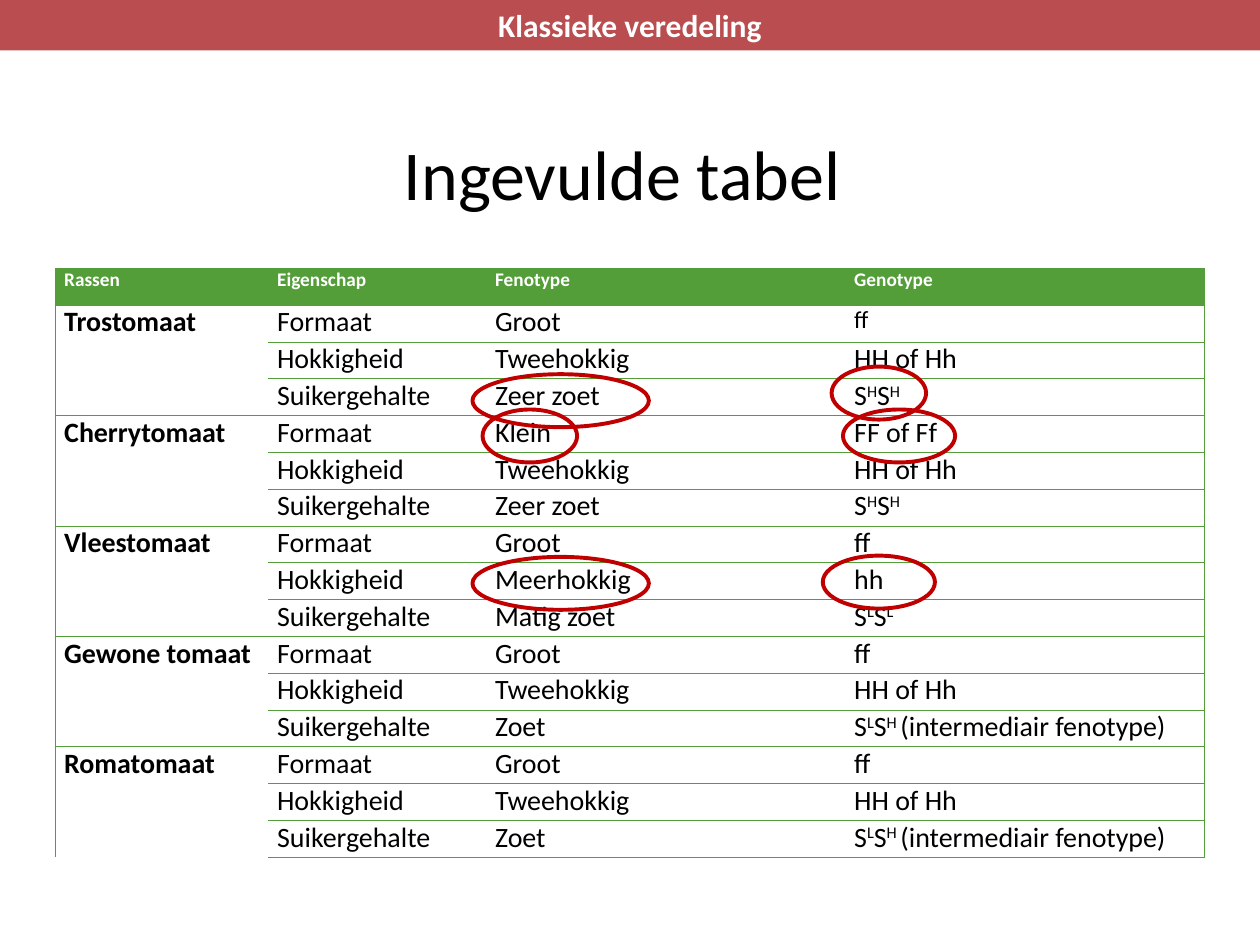
from lxml import etree
from pptx import Presentation
from pptx.dml.color import RGBColor
from pptx.enum import shapes, text
from pptx.oxml import ns
from pptx.util import Inches, Pt

GREEN = RGBColor(0x54, 0x9E, 0x39)
RED = RGBColor(0xC0, 0x00, 0x00)
BRICK = RGBColor(0xB9, 0x4D, 0x4F)
WHITE = RGBColor(0xFF, 0xFF, 0xFF)
BLACK = RGBColor(0x00, 0x00, 0x00)

CHAPTER = "Klassieke veredeling"
TITLE = "Ingevulde tabel "
HEADINGS = ["Rassen", "Eigenschap", "Fenotype", "Genotype"]
TRAITS = ["Formaat", "Hokkigheid", "Suikergehalte"]
INTERMEDIATE = "S|L|S|H |(intermediair fenotype)"
VARIETIES = [
    ("Trostomaat", [("Groot", "ff"), ("Tweehokkig", "HH of Hh"), ("Zeer zoet", "S|H|S|H")]),
    ("Cherrytomaat", [("Klein", "FF of Ff"), ("Tweehokkig", "HH of Hh"), ("Zeer zoet", "S|H|S|H")]),
    ("Vleestomaat", [("Groot", "ff"), ("Meerhokkig", "hh"), ("Matig zoet", "S|L|S|L")]),
    ("Gewone tomaat", [("Groot", "ff"), ("Tweehokkig", "HH of Hh"), ("Zoet", INTERMEDIATE)]),
    ("Romatomaat", [("Groot", "ff"), ("Tweehokkig", "HH of Hh"), ("Zoet", INTERMEDIATE)]),
]
COLUMN_WIDTHS = [1.69, 1.73, 2.85, 2.85]
TABLE_LEFT, TABLE_TOP, TABLE_HEIGHT = 0.44, 2.13, 4.68
HIGHLIGHT_HEIGHT = 0.42
HIGHLIGHTS = [
    (3.83, 3.25, 0.75), (3.75, 2.97, 1.4), (3.75, 4.42, 1.4),
    (6.6, 2.91, 0.75), (6.69, 3.25, 0.89), (6.53, 4.41, 0.89),
]


def write(frame, content, size=16, color=BLACK, bold=False, align=None, spacing=None):
    paragraph = frame.paragraphs[0]
    paragraph.alignment = align
    paragraph.line_spacing = spacing
    for index, part in enumerate(content.split("|")):
        run = paragraph.add_run()
        run.text = part
        run.font.name = "Calibri"
        run.font.size = Pt(size)
        run.font.bold = bold
        run.font.color.rgb = color
        if index % 2:
            run._r.get_or_add_rPr().set("baseline", "30000")


def set_borders(cell, visible):
    properties = cell._tc.get_or_add_tcPr()
    for side in "LRTB":
        line = etree.SubElement(properties, ns.qn(f"a:ln{side}"), w=str(Pt(0.5)))
        if side in visible:
            fill = etree.SubElement(line, ns.qn("a:solidFill"))
            etree.SubElement(fill, ns.qn("a:srgbClr"), val=str(GREEN))
        else:
            etree.SubElement(line, ns.qn("a:noFill"))


def add_varieties_table(slide):
    group = len(TRAITS)
    rows = [HEADINGS]
    for variety, values in VARIETIES:
        for index, (trait, pair) in enumerate(zip(TRAITS, values)):
            rows.append(["" if index else variety, trait, *pair])

    table = slide.shapes.add_table(
        len(rows), len(HEADINGS), Inches(TABLE_LEFT), Inches(TABLE_TOP),
        Inches(sum(COLUMN_WIDTHS)), Inches(TABLE_HEIGHT)).table
    table.horz_banding = False
    for column, width in zip(table.columns, COLUMN_WIDTHS):
        column.width = Inches(width)

    for r, row in enumerate(rows):
        table.rows[r].height = Inches(TABLE_HEIGHT / len(rows))
        for c, content in enumerate(row):
            cell = table.cell(r, c)
            cell.margin_left = cell.margin_right = Inches(0.07)
            cell.margin_top = cell.margin_bottom = 0
            sides = {0: "L", len(HEADINGS) - 1: "R"}.get(c, "")
            if c or r % group == 1 or r == 0:
                sides += "T"
            if c or r % group == 0:
                sides += "B"
            set_borders(cell, sides)
            if r == 0:
                cell.fill.solid()
                cell.fill.fore_color.rgb = GREEN
                write(cell.text_frame, content, size=11, color=WHITE, bold=True)
                continue
            cell.fill.background()
            if content:
                size = 14 if (r, c) == (1, 3) else 16
                write(cell.text_frame, content, size=size, bold=c == 0)

    for first in range(1, len(rows), group):
        table.cell(first, 0).merge(table.cell(first + group - 1, 0))


def main():
    deck = Presentation()
    deck.slide_width, deck.slide_height = Inches(10), Inches(7.5)
    slide = deck.slides.add_slide(deck.slide_layouts[6])

    title = slide.shapes.add_textbox(Inches(0.69), Inches(0.98), Inches(8.62), Inches(0.87))
    title.text_frame.word_wrap = True
    title.text_frame.vertical_anchor = text.MSO_ANCHOR.MIDDLE
    write(title.text_frame, TITLE, size=40, align=text.PP_ALIGN.CENTER, spacing=0.9)

    add_varieties_table(slide)

    for left, top, width in HIGHLIGHTS:
        highlight = slide.shapes.add_shape(
            shapes.MSO_SHAPE.OVAL, Inches(left), Inches(top),
            Inches(width), Inches(HIGHLIGHT_HEIGHT))
        highlight.shadow.inherit = False
        highlight.fill.background()
        highlight.line.color.rgb = RED
        highlight.line.width = Pt(2.25)

    banner = slide.shapes.add_shape(
        shapes.MSO_SHAPE.RECTANGLE, 0, 0, deck.slide_width, Inches(0.4))
    banner.shadow.inherit = False
    banner.fill.solid()
    banner.fill.fore_color.rgb = BRICK
    banner.line.fill.background()
    write(banner.text_frame, CHAPTER, size=18, color=WHITE, bold=True,
          align=text.PP_ALIGN.CENTER)

    deck.save("out.pptx")


if __name__ == "__main__":
    main()
